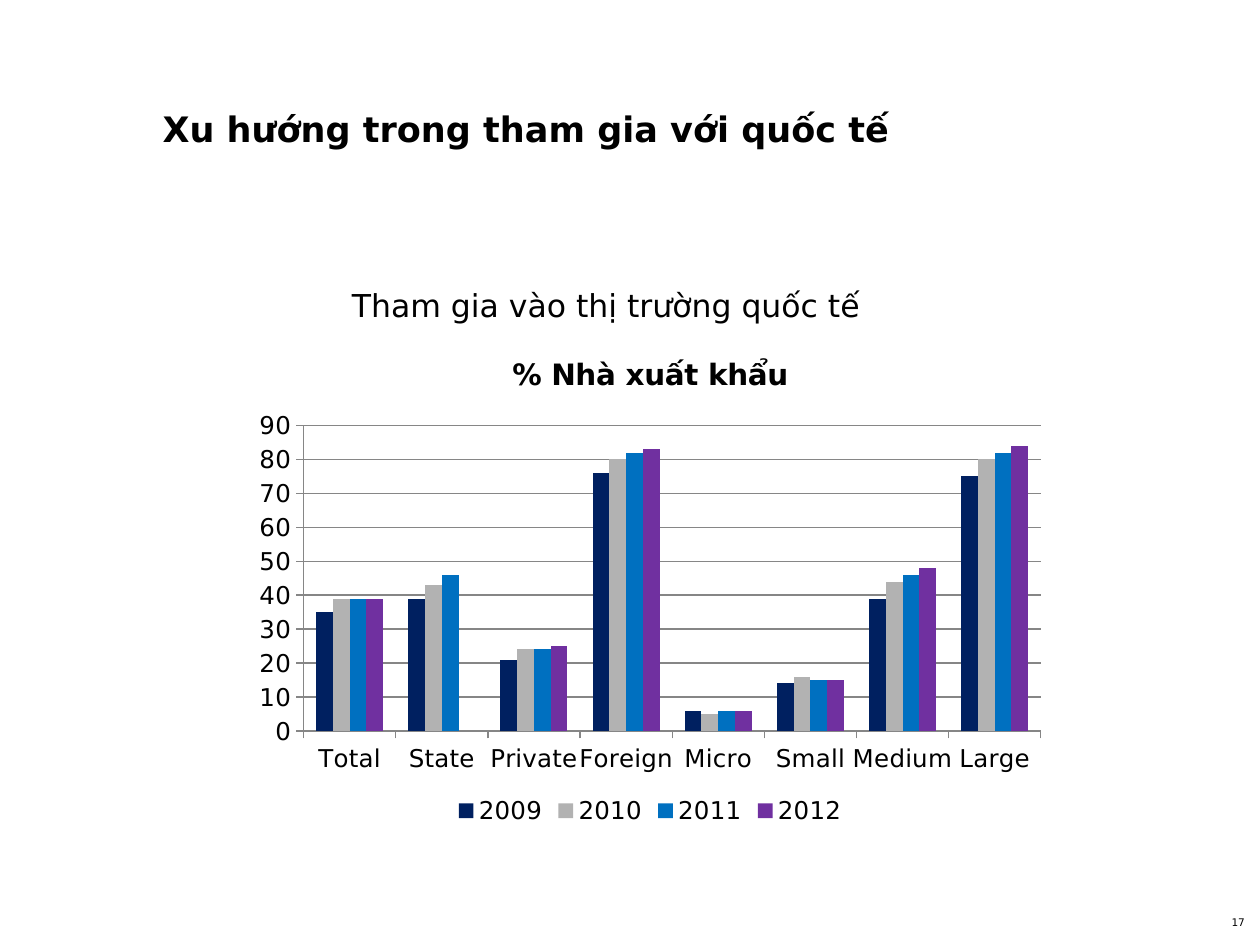
"""Build the slide on trends in international participation with its exporter chart."""
from dataclasses import dataclass
from typing import Optional

from pptx import Presentation
from pptx.chart.data import CategoryChartData
from pptx.dml.color import RGBColor
from pptx.enum.chart import XL_CHART_TYPE, XL_LEGEND_POSITION, XL_TICK_MARK
from pptx.enum.text import MSO_ANCHOR, PP_ALIGN
from pptx.util import Inches, Pt

FONT = "DejaVu Sans"
COLORS = {
    "text": "000000",
    "axis": "868686",
    "navy": "002060",
    "grey": "B2B2B2",
    "blue": "0070C0",
    "purple": "7030A0",
}
SECTORS = ["Total", "State", "Private", "Foreign", "Micro", "Small", "Medium", "Large"]


@dataclass
class Box:
    left: float
    top: float
    width: float
    height: float

    def lengths(self) -> tuple:
        return tuple(Inches(side) for side in (self.left, self.top, self.width, self.height))


@dataclass
class Label:
    text: str
    box: Box
    size: float
    align: PP_ALIGN = PP_ALIGN.LEFT
    anchor: MSO_ANCHOR = MSO_ANCHOR.TOP
    bold: bool = False
    line_spacing: float = 1.0


@dataclass
class Year:
    name: str
    color: str
    shares: list[Optional[int]]


HEADING = Label("Xu hướng trong tham gia với quốc tế", Box(1.29, 0.67, 6.7, 0.7), 20,
                anchor=MSO_ANCHOR.MIDDLE, bold=True)
LABELS = [
    Label("17", Box(9.42, 7.27, 0.46, 0.17), 6, PP_ALIGN.RIGHT),
    Label("Tham gia vào thị trường quốc tế", Box(1.29, 2.12, 7.04, 3.83), 18,
          PP_ALIGN.CENTER, line_spacing=1.5),
]
CHART_TITLE = "% Nhà xuất khẩu"
CHART_BOX = Box(1.93, 2.65, 6.46, 3.94)
YEARS = [
    Year("2009", "navy", [35, 39, 21, 76, 6, 14, 39, 75]),
    Year("2010", "grey", [39, 43, 24, 80, 5, 16, 44, 80]),
    Year("2011", "blue", [39, 46, 24, 82, 6, 15, 46, 82]),
    Year("2012", "purple", [39, None, 25, 83, 6, 15, 48, 84]),
]


def rgb(name: str) -> RGBColor:
    return RGBColor.from_string(COLORS[name])


def style_font(font, size: float, bold: bool = False) -> None:
    font.name = FONT
    font.size = Pt(size)
    font.bold = bold
    font.color.rgb = rgb("text")


def write_label(shape, label: Label) -> None:
    shape.left, shape.top, shape.width, shape.height = label.box.lengths()
    frame = shape.text_frame
    frame.word_wrap = True
    frame.vertical_anchor = label.anchor
    frame.margin_left = frame.margin_right = frame.margin_top = frame.margin_bottom = 0
    paragraph = frame.paragraphs[0]
    paragraph.alignment = label.align
    paragraph.line_spacing = label.line_spacing
    run = paragraph.add_run()
    run.text = label.text
    style_font(run.font, label.size, label.bold)


def add_exporter_chart(slide) -> None:
    exporters = CategoryChartData()
    exporters.categories = SECTORS
    for year in YEARS:
        exporters.add_series(year.name, year.shares)
    chart = slide.shapes.add_chart(
        XL_CHART_TYPE.COLUMN_CLUSTERED, *CHART_BOX.lengths(), exporters).chart
    style_font(chart.font, 14)

    chart.has_title = True
    title_run = chart.chart_title.text_frame.paragraphs[0].add_run()
    title_run.text = CHART_TITLE
    style_font(title_run.font, 16.8, bold=True)
    chart.chart_title.include_in_layout = False

    chart.has_legend = True
    chart.legend.position = XL_LEGEND_POSITION.BOTTOM
    chart.legend.include_in_layout = False

    shares = chart.value_axis
    shares.minimum_scale, shares.maximum_scale, shares.major_unit = 0, 90, 10
    shares.has_major_gridlines = True
    for axis in (chart.category_axis, shares):
        axis.major_tick_mark = XL_TICK_MARK.OUTSIDE
    for ruled in (chart.category_axis, shares, shares.major_gridlines):
        ruled.format.line.color.rgb = rgb("axis")
        ruled.format.line.width = Pt(0.75)

    columns = chart.plots[0]
    columns.gap_width = 150
    columns.overlap = 0
    columns.vary_by_categories = False
    for series, year in zip(columns.series, YEARS):
        series.format.fill.solid()
        series.format.fill.fore_color.rgb = rgb(year.color)
        series.invert_if_negative = False


def main() -> None:
    deck = Presentation()
    deck.slide_width, deck.slide_height = Inches(10), Inches(7.5)
    slide = deck.slides.add_slide(deck.slide_layouts[5])
    write_label(slide.shapes.title, HEADING)
    for label in LABELS:
        write_label(slide.shapes.add_textbox(*label.box.lengths()), label)
    add_exporter_chart(slide)
    deck.save("out.pptx")


if __name__ == "__main__":
    main()
